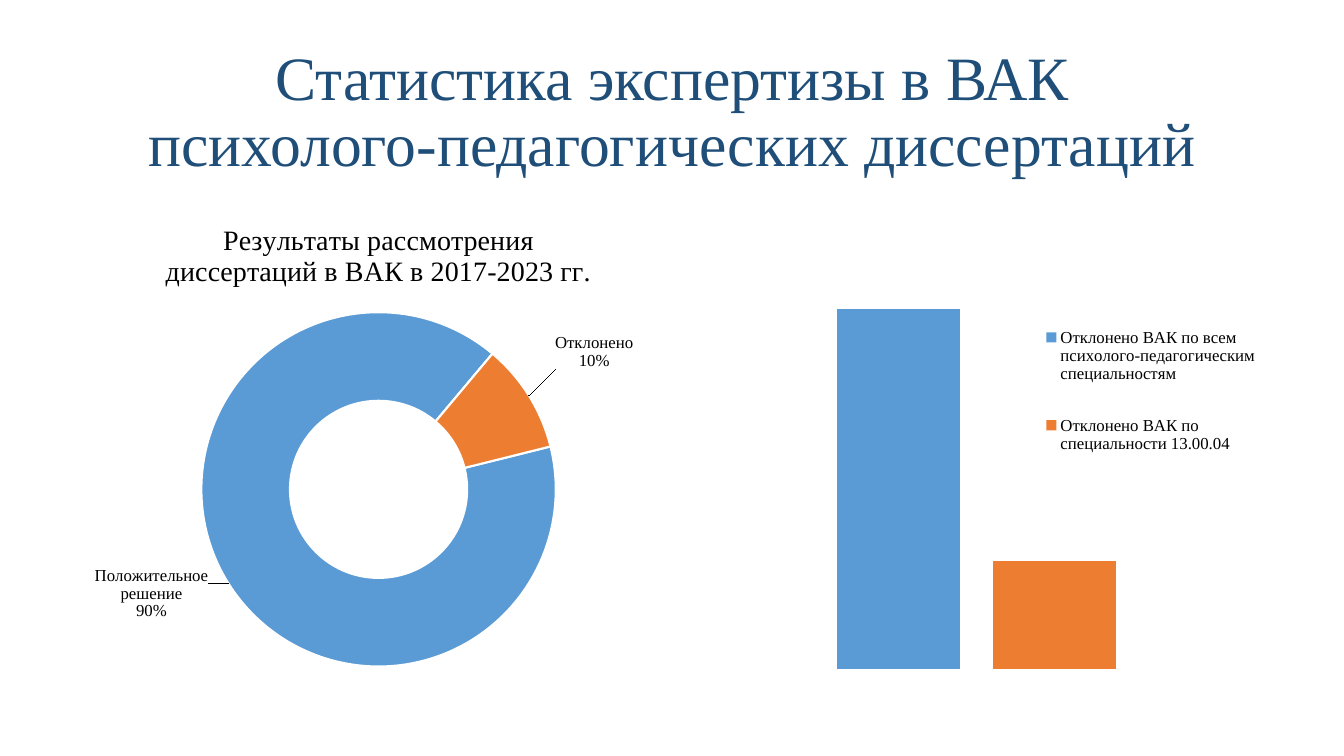
from lxml.etree import SubElement
from pptx import Presentation
from pptx.chart.data import CategoryChartData
from pptx.dml.color import RGBColor
from pptx.enum.chart import XL_CHART_TYPE as ChartType, XL_LEGEND_POSITION as LegendPosition
from pptx.enum.text import MSO_ANCHOR as Anchor, PP_ALIGN as Align
from pptx.oxml import parse_xml
from pptx.oxml.ns import nsdecls, qn
from pptx.util import Inches, Pt

SERIF = "Times New Roman"
BLUE, ORANGE, NAVY, BLACK, WHITE = "5B9BD5", "ED7D31", "1F4E79", "000000", "FFFFFF"


def color(value):
    """Turn a hex string into a colour."""
    return RGBColor.from_string(value)


def style_font(font, size, value=BLACK, name=SERIF):
    """Set the face, size and colour of a font."""
    font.name, font.size, font.bold = name, Pt(size), False
    font.color.rgb = color(value)


def make_layout(inner=False, **fractions):
    """Return a manual chart layout given as fractions of the chart."""
    modes = {"layoutTarget": "inner", "xMode": "edge", "yMode": "edge"} if inner else {}
    if not inner and "w" in fractions:
        modes = {"xMode": "edge", "yMode": "edge"}
    parts = "".join(f'<c:{key} val="{value}"/>' for key, value in {**modes, **fractions}.items())
    return parse_xml(f'<c:layout {nsdecls("c")}><c:manualLayout>{parts}</c:manualLayout></c:layout>')


def place_plot(chart, **fractions):
    """Fix the plot area inside the chart."""
    area = chart.plots[0]._element.getparent()
    for old in area.findall(qn("c:layout")):
        area.remove(old)
    area.insert(0, make_layout(inner=True, **fractions))


def add_chart(slide, box, kind, categories, series):
    """Add a chart with the shared base font."""
    data = CategoryChartData()
    data.categories = categories
    for name, values in series:
        data.add_series(name, values)
    chart = slide.shapes.add_chart(kind, *map(Inches, box), data).chart
    style_font(chart.font, 10, name="Calibri")
    return chart


def add_title(slide, box):
    """Add the slide heading."""
    frame = slide.shapes.add_textbox(*map(Inches, box)).text_frame
    frame.word_wrap = True
    frame.vertical_anchor = Anchor.MIDDLE
    frame.text = "Статистика экспертизы в ВАК\vпсихолого-педагогических диссертаций"
    para = frame.paragraphs[0]
    para.alignment, para.line_spacing = Align.CENTER, 0.9
    for span in para.runs:
        style_font(span.font, 44, NAVY)


def label_point(point, x, y):
    """Show category and percentage, shifted from the ring."""
    style_font(point.data_label.font, 12)
    label = point._element.xpath(f"c:dLbls/c:dLbl[c:idx/@val='{point._idx}']")[0]
    label.find(qn("c:idx")).addnext(make_layout(x=x, y=y))
    for tag, shown in (("showVal", 0), ("showCatName", 1), ("showPercent", 1)):
        label.find(qn(f"c:{tag}")).set("val", str(shown))
    SubElement(label, qn("c:separator")).text = "\n"


def add_results(slide, box):
    """Add the doughnut of decisions."""
    heading = "Результаты рассмотрения диссертаций в ВАК в 2017-2023 гг."
    chart = add_chart(slide, box, ChartType.DOUGHNUT,
                      ["Положительное решение", "Отклонено"], [(heading, (90, 10))])
    chart.has_legend = False
    chart.has_title = True
    chart.chart_title.include_in_layout = False
    frame = chart.chart_title.text_frame
    frame.text = heading
    style_font(frame.paragraphs[0].runs[0].font, 20)
    place_plot(chart, x=0.19, y=0.23, w=0.62, h=0.74)
    plot = chart.plots[0]
    plot.vary_by_categories = True
    for tag, value in (("firstSliceAng", 76), ("holeSize", 57)):
        plot._element.find(qn(f"c:{tag}")).set("val", str(value))
    looks = ((BLUE, -0.2, 0.07), (ORANGE, 0.18, -0.14))
    for index, (fill, x, y) in enumerate(looks):
        point = plot.series[0].points[index]
        point.format.fill.solid()
        point.format.fill.fore_color.rgb = color(fill)
        point.format.line.color.rgb = color(WHITE)
        point.format.line.width = Pt(1.5)
        label_point(point, x, y)


def add_rejections(slide, box):
    """Add the columns of rejected dissertations."""
    chart = add_chart(slide, box, ChartType.COLUMN_CLUSTERED, ["1"], [
        ("Отклонено ВАК по всем психолого-педагогическим специальностям", (100,)),
        ("Отклонено ВАК по специальности 13.00.04", (30,))])
    chart.has_title = False
    chart.category_axis.visible = chart.value_axis.visible = False
    chart.value_axis.has_major_gridlines = False
    chart.value_axis.minimum_scale, chart.value_axis.maximum_scale = 0, 100
    plot = chart.plots[0]
    plot.vary_by_categories = False
    plot.gap_width, plot.overlap = 219, -27
    for series, fill in zip(plot.series, (BLUE, ORANGE)):
        series.format.fill.solid()
        series.format.fill.fore_color.rgb = color(fill)
    place_plot(chart, x=0.02, y=0.09, w=0.96, h=0.75)
    chart.has_legend = True
    legend = chart.legend
    legend.position = LegendPosition.BOTTOM
    legend.include_in_layout = False
    style_font(legend.font, 12)
    for old in legend._element.findall(qn("c:layout")):
        legend._element.remove(old)
    legend._element.find(qn("c:legendPos")).addnext(make_layout(x=0.61, y=0.06, w=0.39, h=0.4))


def main():
    """Build the deck."""
    deck = Presentation()
    deck.slide_width, deck.slide_height = Inches(13.33), Inches(7.5)
    slide = deck.slides.add_slide(deck.slide_layouts[6])
    add_title(slide, (0.92, 0.4, 11.5, 1.45))
    add_results(slide, (0.92, 2, 5.67, 4.76))
    add_rejections(slide, (6.85, 2.64, 5.67, 4.76))
    deck.save("out.pptx")


if __name__ == "__main__":
    main()
